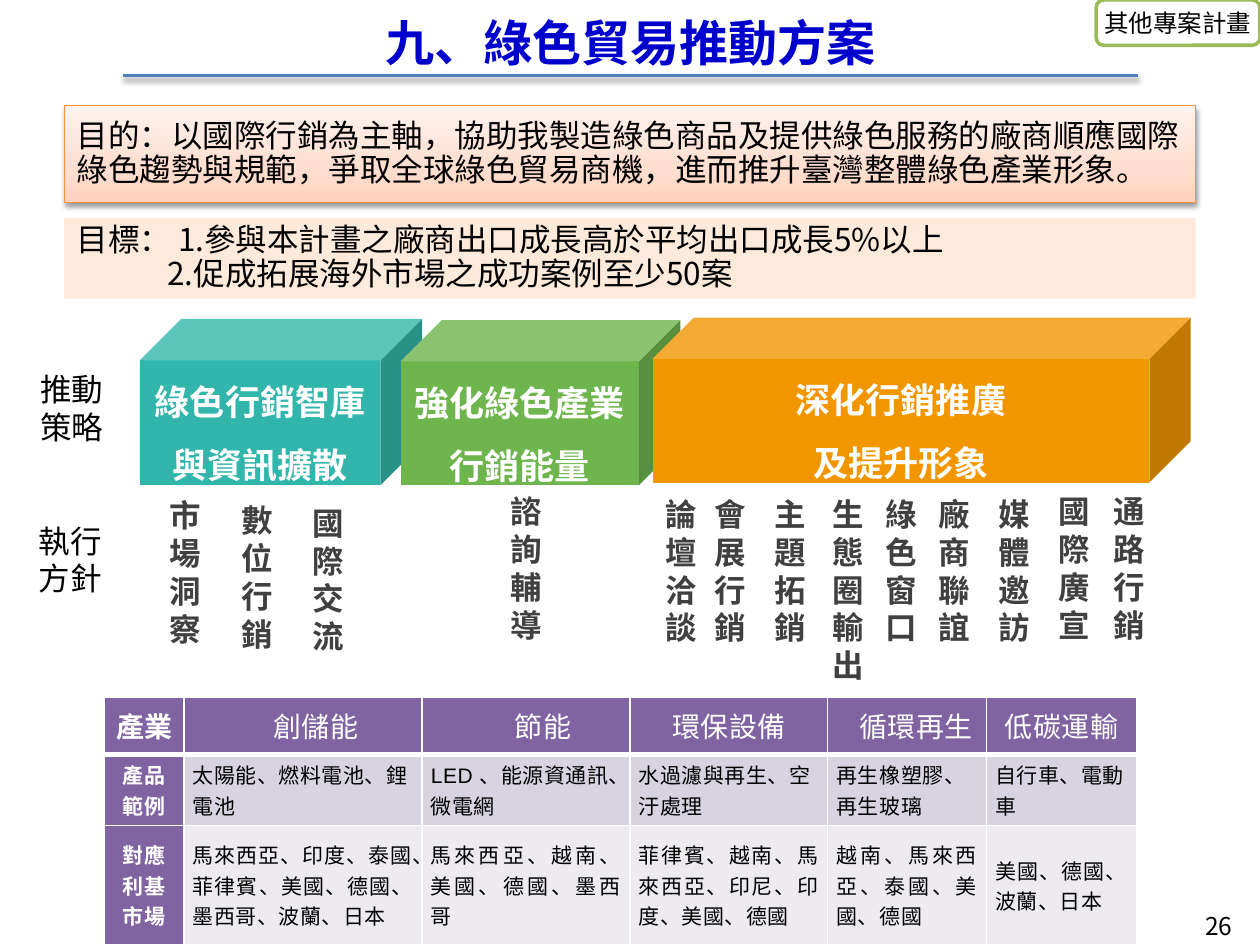
from dataclasses import dataclass

from lxml import etree
from pptx import Presentation
from pptx import util as u
from pptx.dml.color import RGBColor
from pptx.enum import shapes, text
from pptx.oxml.ns import qn

Inches = u.Inches
AL, ANC = text.PP_ALIGN, text.MSO_ANCHOR
SHAPE = shapes.MSO_SHAPE
A_NS = "http://schemas.openxmlformats.org/drawingml/2006/main"


@dataclass(frozen=True)
class Theme:
    sans: str = "Noto Sans CJK SC"
    arial: str = "Arial"
    black: str = "000000"
    white: str = "FFFFFF"
    title: str = "0000CC"
    rule: str = "4F81BD"
    tag: str = "9BBB59"
    purpose_line: str = "F69240"
    purpose_stops: tuple = ((0, "FFD2BD"), (35, "FFDED0"), (100, "FFF2ED"))
    goal: str = "FDEADA"
    teal: str = "32B6AB"
    green: str = "6FB54E"
    orange: str = "F29600"
    label: str = "404040"
    header: str = "8064A2"
    bands: tuple = ("D8D3E0", "EDEAF0")
    title_pt: int = 28
    cube_pt: int = 20
    body_pt: int = 18
    header_pt: int = 16
    small_pt: int = 14
    cell_pt: int = 12


T = Theme()

# Label text by paragraph, then left and top
POLICIES = [
    ("市場洞察", 1.25, 3.89), ("數位行銷", 1.82, 3.93), ("國際交流", 2.38, 3.95),
    ("諮詢輔導", 3.95, 3.86), ("論壇洽談", 5.18, 3.88), ("會展行銷", 5.57, 3.88),
    ("主題拓銷", 6.05, 3.88), ("生態圈輸出", 6.51, 3.88), ("綠色窗口", 6.93, 3.88),
    ("廠商聯誼", 7.35, 3.88), (["媒體", "邀訪"], 7.83, 3.88),
    ("國際廣宣", 8.3, 3.86), (["通路行銷"], 8.74, 3.86),
]

TABLE = [
    [["產業"], "創儲能", "節能", "環保設備", "循環再生", "低碳運輸"],
    [["產品", "範例"], "太陽能、燃料電池、鋰電池", "LED 、能源資通訊、微電網",
     "水過濾與再生、空汙處理", "再生橡塑膠、再生玻璃", "自行車、電動車"],
    [["對應", "利基", "市場"], "馬來西亞、印度、泰國、菲律賓、美國、德國、墨西哥、波蘭、日本",
     "馬來西亞、越南、美國、德國、墨西哥",
     "菲律賓、越南、馬來西亞、印尼、印度、美國、德國",
     "越南、馬來西亞、泰國、美國、德國", "美國、德國、波蘭、日本"],
]
COL_WIDTHS = [0.63, 1.89, 1.65, 1.57, 1.26, 1.19]
ROW_HEIGHTS = [0.46, 0.56, 0.95]
HEADER_INDENTS = [0, 0.2, 0.27, 0, 0.14, 0]


def rgb(color):
    return RGBColor.from_string(color)


def set_attrs(obj, values):
    for name, value in values.items():
        setattr(obj, name, value)


def add_xml(parent, xml):
    parent.append(etree.fromstring(xml.replace(">", f' xmlns:a="{A_NS}">', 1)))


def write(tf, lines, size, color=T.black, font=T.sans, bold=False, spacing=None,
          indents=(), margins=(), **para):
    """Fill a text frame; indents and margins are inches per paragraph."""
    for i, line in enumerate(lines):
        p = tf.paragraphs[0] if i == 0 else tf.add_paragraph()
        set_attrs(p, para)
        r = p.add_run()
        r.text = line
        set_attrs(r.font, {"size": u.Pt(size), "bold": bold, "name": font})
        r.font.color.rgb = rgb(color)
        rpr = r.font._element
        if font == T.sans:
            etree.SubElement(rpr, qn("a:ea")).set("typeface", font)
        if spacing:
            rpr.set("spc", str(spacing))
        for key, lengths in (("indent", indents), ("marL", margins)):
            if lengths and lengths[i]:
                p._p.get_or_add_pPr().set(key, str(Inches(lengths[i])))


def add_text(slide, box, lines, size, wrap=True, anchor=ANC.TOP, **style):
    sp = slide.shapes.add_textbox(*map(Inches, box))
    set_attrs(sp.text_frame, {"word_wrap": wrap, "vertical_anchor": anchor})
    write(sp.text_frame, lines, size, **style)


def add_box(slide, kind, box, lines, size, fill=None, line=None, wrap=True, **style):
    sp = slide.shapes.add_shape(kind, *map(Inches, box))
    sp.shadow.inherit = False
    if fill:
        sp.fill.solid()
        sp.fill.fore_color.rgb = rgb(fill)
    if line:
        sp.line.color.rgb = rgb(line[0])
        sp.line.width = u.Pt(line[1])
    else:
        sp.line.fill.background()
    set_attrs(sp.text_frame, {"word_wrap": wrap, "vertical_anchor": ANC.MIDDLE})
    write(sp.text_frame, lines, size, **style)
    return sp


def add_shadow(sp, opacity, distance):
    sppr = sp._element.spPr
    for old in sppr.findall(qn("a:effectLst")):
        sppr.remove(old)
    add_xml(sppr, f'<a:effectLst><a:outerShdw blurRad="40000" dist="{u.Pt(distance)}" '
            f'dir="5400000" rotWithShape="0"><a:srgbClr val="{T.black}">'
            f'<a:alpha val="{opacity * 1000}"/></a:srgbClr></a:outerShdw></a:effectLst>')


def add_gradient(sp, stops):
    sp.fill.gradient()
    grad = sp._element.spPr.find(qn("a:gradFill"))
    gs_list = grad.find(qn("a:gsLst"))
    for old in list(gs_list):
        gs_list.remove(old)
    for pos, color in stops:
        add_xml(gs_list, f'<a:gs pos="{pos * 1000}"><a:srgbClr val="{color}"/></a:gs>')
    grad.find(qn("a:lin")).set("ang", str(270 * 60000))


def style_cell(cell, fill, bottom):
    set_attrs(cell, {"margin_left": Inches(0.07), "margin_right": Inches(0.07),
                     "margin_top": 0, "margin_bottom": 0,
                     "vertical_anchor": ANC.MIDDLE})
    for side, width in (("L", 1), ("R", 1), ("T", 1), ("B", bottom)):
        add_xml(cell._tc.get_or_add_tcPr(),
                f'<a:ln{side} w="{u.Pt(width)}"><a:solidFill>'
                f'<a:srgbClr val="{T.white}"/></a:solidFill></a:ln{side}>')
    cell.fill.solid()
    cell.fill.fore_color.rgb = rgb(fill)


def add_industry_table(slide):
    box = (0.83, 5.53, sum(COL_WIDTHS), sum(ROW_HEIGHTS))
    table = slide.shapes.add_table(len(TABLE), len(COL_WIDTHS), *map(Inches, box)).table
    for col, width in zip(table.columns, COL_WIDTHS):
        col.width = Inches(width)
    for i, (row, height) in enumerate(zip(TABLE, ROW_HEIGHTS)):
        table.rows[i].height = Inches(height)
        for j, content in enumerate(row):
            cell = table.cell(i, j)
            head = i == 0 or j == 0
            style_cell(cell, T.header if head else T.bands[i - 1], 3 if i == 0 else 1)
            align = AL.CENTER if head else (AL.LEFT, AL.JUSTIFY)[i - 1]
            write(cell.text_frame, content if j == 0 else [content],
                  T.header_pt if i == 0 else T.cell_pt,
                  color=T.white if head else T.black, font=T.arial, bold=j == 0,
                  spacing=30, indents=[HEADER_INDENTS[j]] if i == 0 else (),
                  alignment=align)


def main():
    prs = Presentation()
    prs.slide_width, prs.slide_height = Inches(10), Inches(7.5)
    slide = prs.slides.add_slide(prs.slide_layouts[6])

    # Page number, tag and title
    add_text(slide, (7.55, 7.09, 2.33, 0.52), ["26"], T.small_pt,
             anchor=ANC.MIDDLE, alignment=AL.RIGHT)
    add_box(slide, SHAPE.FLOWCHART_ALTERNATE_PROCESS, (8.7, 0, 1.3, 0.36),
            ["其他專案計畫"], T.small_pt, T.white, (T.tag, 2), wrap=False,
            alignment=AL.CENTER)
    add_text(slide, (1.54, 0.05, 6.93, 0.57), ["九、綠色貿易推動方案"], T.title_pt,
             color=T.title, bold=True, alignment=AL.CENTER)
    rule = slide.shapes.add_connector(shapes.MSO_CONNECTOR.STRAIGHT,
                                      *map(Inches, (9.03, 0.6, 0.98, 0.6)))
    rule.line.color.rgb = rgb(T.rule)
    rule.line.width = u.Pt(1.75)
    add_shadow(rule, 35, 1.8)

    # Purpose and goals
    para = {"alignment": AL.LEFT, "line_spacing": 0.9}
    purpose = add_box(
        slide, SHAPE.RECTANGLE, (0.51, 0.84, 8.98, 0.77),
        ["目的：以國際行銷為主軸，協助我製造綠色商品及提供綠色服務的廠商順應國際"
         "綠色趨勢與規範，爭取全球綠色貿易商機，進而推升臺灣整體綠色產業形象。"],
        T.body_pt, line=(T.purpose_line, 0.75), **para)
    add_gradient(purpose, T.purpose_stops)
    add_shadow(purpose, 38, 1.6)
    add_box(slide, SHAPE.RECTANGLE, (0.51, 1.73, 8.98, 0.64),
            ["目標： 1.參與本計畫之廠商出口成長高於平均出口成長5%以上",
             "2.促成拓展海外市場之成功案例至少50案"],
            T.body_pt, T.goal, margins=(0, 0.72), **para)

    # Strategies
    for box, fill, lines in (
            ((1.11, 2.53, 2.24, 1.32), T.teal, ["綠色行銷智庫", "與資訊擴散"]),
            ((3.18, 2.54, 2.22, 1.31), T.green, ["強化綠色產業", "行銷能量"]),
            ((5.18, 2.52, 4.27, 1.31), T.orange, ["深化行銷推廣", "及提升形象"])):
        add_box(slide, SHAPE.CUBE, box, lines, T.cube_pt, fill, color=T.white,
                bold=True, alignment=AL.CENTER, line_spacing=1.5)

    # Policies, one character a line
    for lines, left, top in POLICIES:
        add_text(slide, (left, top, 0.47, 1.26), lines, T.body_pt,
                 wrap=isinstance(lines, list), color=T.label, font=T.arial, bold=True)

    # Row names and industry table
    for name, left, top in (("推動策略", 0.22, 2.89), ("執行方針", 0.21, 4.09)):
        add_text(slide, (left, top, 0.79, 0.71), [name], T.body_pt)
    add_industry_table(slide)

    prs.save("out.pptx")


if __name__ == "__main__":
    main()
